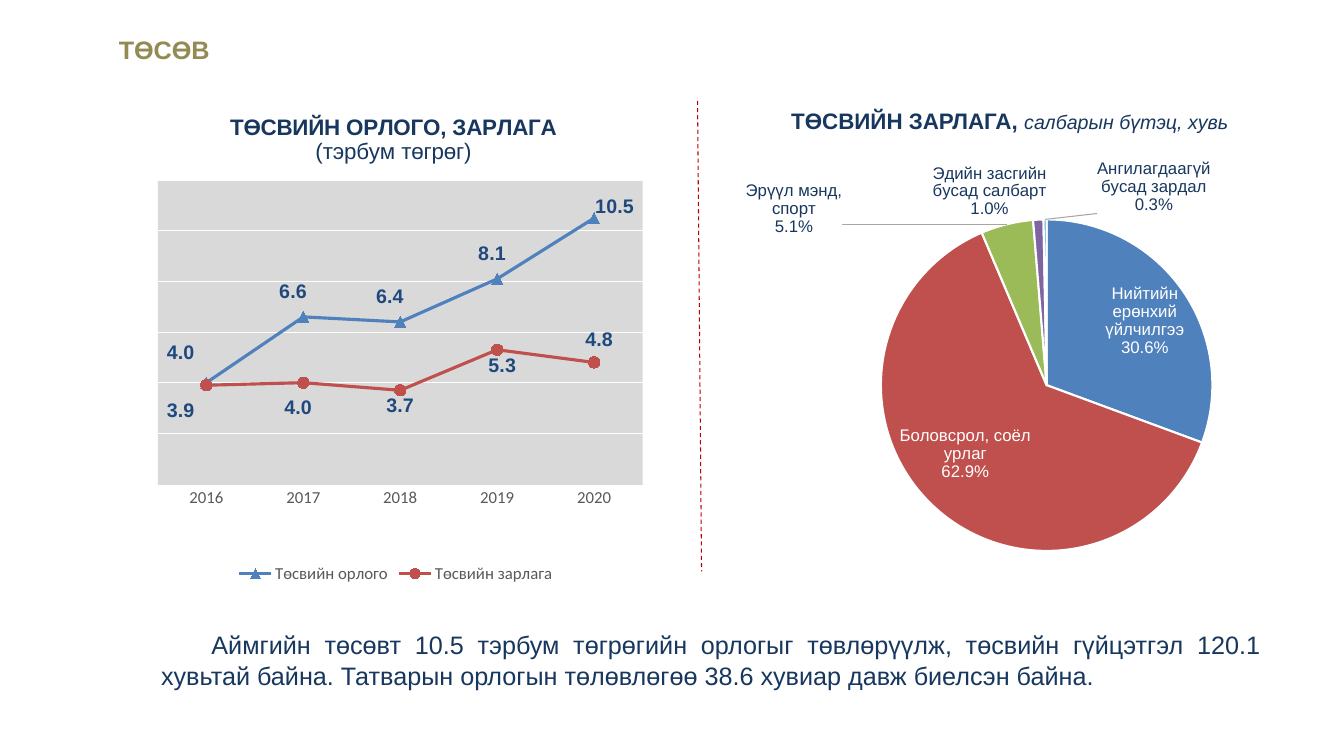
from dataclasses import dataclass
from lxml import etree
from pptx import Presentation
from pptx.chart.data import CategoryChartData
from pptx.dml.color import RGBColor
from pptx.enum.chart import (XL_CHART_TYPE, XL_LABEL_POSITION, XL_LEGEND_POSITION,
                             XL_MARKER_STYLE, XL_TICK_MARK)
from pptx.enum.dml import MSO_LINE
from pptx.enum.shapes import MSO_CONNECTOR
from pptx.enum.text import MSO_ANCHOR, PP_ALIGN
from pptx.oxml import parse_xml
from pptx.oxml.ns import qn
from pptx.util import Cm, Pt

LINE, PIE = XL_CHART_TYPE.LINE_MARKERS, XL_CHART_TYPE.PIE
ABOVE, BELOW = XL_LABEL_POSITION.ABOVE, XL_LABEL_POSITION.BELOW
CENTER, OUTSIDE = XL_LABEL_POSITION.CENTER, XL_LABEL_POSITION.OUTSIDE_END
TRIANGLE, CIRCLE = XL_MARKER_STYLE.TRIANGLE, XL_MARKER_STYLE.CIRCLE
NO_TICK, BOTTOM, DASH = XL_TICK_MARK.NONE, XL_LEGEND_POSITION.BOTTOM, MSO_LINE.DASH
LEFT, JUSTIFY = PP_ALIGN.LEFT, PP_ALIGN.JUSTIFY
TOP, STRAIGHT = MSO_ANCHOR.TOP, MSO_CONNECTOR.STRAIGHT
SPACES = ('xmlns:c="http://schemas.openxmlformats.org/drawingml/2006/chart" '
          'xmlns:a="http://schemas.openxmlformats.org/drawingml/2006/main" '
          'xmlns:c15="http://schemas.microsoft.com/office/drawing/2012/chart"')

@dataclass(frozen=True)
class Theme:
    font: str = "Arial"
    small: str = "Calibri"
    navy: str = "17375E"
    value: str = "1F497D"
    gold: str = "948A54"
    gray: str = "595959"
    lead: str = "A6A6A6"
    pale: str = "D9D9D9"
    white: str = "FFFFFF"
    rule: str = "C00000"
    slices: tuple = ("4F81BD", "C0504D", "9BBB59", "8064A2", "4BACC6")
    big: int = 18
    head: int = 16
    mid: int = 14
    note: int = 12

T = Theme()

def style(font, size, color, bold=False, italic=False, name=T.font):
    font.name, font.size, font.bold, font.italic = name, Pt(size), bold, italic
    font.color.rgb = RGBColor.from_string(color)

def paint(fill, color):
    fill.solid()
    fill.fore_color.rgb = RGBColor.from_string(color)

def stroke(line, color, width):
    line.color.rgb = RGBColor.from_string(color)
    line.width = Pt(width)

def add_run(para, text, *look):
    run = para.add_run()
    run.text = text
    style(run.font, *look)

def add_text(slide, box, runs):
    frame = slide.shapes.add_textbox(*map(Cm, box)).text_frame
    frame.word_wrap = True
    for run in runs:
        add_run(frame.paragraphs[0], *run)
    return frame.paragraphs[0]

def add_title(slide, text):
    title = slide.shapes.title
    title.left, title.top, title.width, title.height = map(Cm, (2.74, 0.74, 29.85, 1.02))
    paint(title.fill, T.white)
    title.text_frame.vertical_anchor = TOP
    para = title.text_frame.paragraphs[0]
    para.alignment = LEFT
    add_run(para, text, T.big, T.gold, True)

def add_rule(slide, *ends):
    rule = slide.shapes.add_connector(STRAIGHT, *map(Cm, ends))
    stroke(rule.line, T.rule, 0.75)
    rule.line.dash_style = DASH
    etree.SubElement(rule._element.spPr, qn("a:effectLst"))

def node(tag, body="", attrs=""):
    return parse_xml(f"<c:{tag} {SPACES} {attrs}>{body}</c:{tag}>")

def layout(modes="", **parts):
    body = "".join(f'<c:{tag} val="{num}"/>' for tag, num in parts.items())
    return node("layout", f"<c:manualLayout>{modes}{body}</c:manualLayout>")

def place(owner, index, frame):
    """Fix a chart part at edges measured from the chart's corner."""
    for old in owner.findall(qn("c:layout")):
        owner.remove(old)
    owner.insert(index, frame)

EDGE = '<c:xMode val="edge"/><c:yMode val="edge"/>'
INNER = '<c:layoutTarget val="inner"/>' + EDGE

def add_chart(slide, kind, box, cats, rows, plot):
    data = CategoryChartData(number_format="0.0")
    data.categories = cats
    for name, nums in rows:
        data.add_series(name, nums)
    chart = slide.shapes.add_chart(kind, *map(Cm, box), data).chart
    chart.font.name, chart.font.size = T.small, Pt(10)
    place(chart._chartSpace.chart.plotArea, 0, layout(INNER, **plot))
    return chart

def add_label(point, spot, shift, look):
    label = point.data_label
    style(label.font, *look)
    label.position = spot
    label._dLbl.insert(1, layout(x=shift[0], y=shift[1]))
    return label._dLbl

def add_trend(slide):
    rows = (("Төсвийн орлого", (4, 6.6, 6.4, 8.1, 10.5)),
            ("Төсвийн зарлага", (3.9, 4, 3.7, 5.3, 4.8)))
    chart = add_chart(slide, LINE, (3.53, 2.67, 12.9, 12.14),
                      ("2016", "2017", "2018", "2019", "2020"), rows,
                      dict(x=0.035, y=0.154, w=0.947, h=0.631))
    # Heading and legend
    title = chart.chart_title
    add_run(title.text_frame.paragraphs[0], "ТӨСВИЙН ОРЛОГО, ЗАРЛАГА", T.head, T.navy, True)
    add_run(title.text_frame.add_paragraph(), "(тэрбум төгрөг)", T.head, T.navy)
    title.include_in_layout = False
    place(title._element, 1, layout(EDGE, x=0.17, y=0.01))
    chart.has_legend = True
    chart.legend.position, chart.legend.include_in_layout = BOTTOM, False
    style(chart.legend.font, T.note, T.gray, name=T.small)
    # Axes and plot area
    years, scale = chart.category_axis, chart.value_axis
    years.major_tick_mark = NO_TICK
    style(years.tick_labels.font, T.note, T.gray, name=T.small)
    stroke(years.format.line, T.pale, 0.75)
    scale.minimum_scale, scale.maximum_scale, scale.major_unit = 0, 12, 2
    scale.visible = False
    stroke(scale.major_gridlines.format.line, T.white, 0.75)
    chart._chartSpace.chart.plotArea.append(node(
        "spPr", f'<a:solidFill><a:srgbClr val="{T.pale}"/></a:solidFill>'))
    # Series with their label offsets
    looks = ((TRIANGLE, ABOVE, ((-0.05, -0.02), (-0.02, -0.01), (-0.02, -0.01),
                                (-0.01, -0.01), (0.04, 0.02))),
             (CIRCLE, BELOW, ((-0.05, 0.01), (-0.01, 0.01), (0, -0.01),
                              (0.01, -0.01), (0.01, -0.09))))
    for row, color, (mark, spot, shifts) in zip(chart.plots[0].series, T.slices, looks):
        row.smooth = False
        stroke(row.format.line, color, 2.25)
        row.marker.style, row.marker.size = mark, 8
        paint(row.marker.format.fill, color)
        stroke(row.marker.format.line, color, 0.75)
        for num, shift in enumerate(shifts):
            add_label(row.points[num], spot, shift, (T.mid, T.value, True))
        # No leader lines
        group = row.data_labels._element
        for flag in group.findall(qn("c:showLeaderLines")):
            flag.set("val", "0")
        group.append(node("extLst", '<c:ext uri="{CE6537A1-D6FC-4f65-9D91-7224C49458BB}">'
                          '<c15:showLeaderLines val="0"/></c:ext>'))

def add_pie(slide):
    cats = ("Нийтийн ерөнхий үйлчилгээ", "Боловсрол, соёл урлаг", "Эрүүл мэнд, спорт",
            "Эдийн засгийн бусад салбарт", "Ангилагдаагүй бусад зардал")
    chart = add_chart(slide, PIE, (17.15, 3.78, 15.24, 10.67), cats,
                      (("Series 1", (30.6, 62.9, 5.1, 1, 0.3)),),
                      dict(x=0.331, y=0.164, w=0.549, h=0.783))
    chart.has_title = chart.has_legend = False
    chart.plots[0].vary_by_categories = True
    row = chart.plots[0].series[0]
    looks = ((CENTER, (0.05, -0.04), T.white), (CENTER, (-0.04, 0.02), T.white),
             (OUTSIDE, (-0.27, 0.04), T.navy), (OUTSIDE, (-0.08, 0.01), T.navy),
             (OUTSIDE, (0.18, 0), T.navy))
    for num, (spot, shift, color) in enumerate(looks):
        point = row.points[num]
        paint(point.format.fill, T.slices[num])
        stroke(point.format.line, T.white, 1.5)
        label = add_label(point, spot, shift, (T.note, color))
        label.insert(2, node("numFmt", attrs='formatCode="0.0&quot;%&quot;" sourceLinked="0"'))
        label.find(qn("c:showCatName")).set("val", "1")
        label.append(node("separator", "\n"))
        if num == 1:
            label.append(node("extLst", '<c:ext uri="{CE6537A1-D6FC-4f65-9D91-7224C49458BB}">'
                              '<c15:layout><c:manualLayout><c:w val="0.17"/><c:h val="0.14"/>'
                              '</c:manualLayout></c15:layout></c:ext>'))
    row.data_labels._element.append(node(
        "leaderLines", f'<c:spPr><a:ln w="9525"><a:solidFill><a:srgbClr val="{T.lead}"/>'
        '</a:solidFill></a:ln></c:spPr>'))

def main():
    prs = Presentation()
    prs.slide_width, prs.slide_height = Cm(33.87), Cm(19.05)
    slide = prs.slides.add_slide(prs.slide_layouts[5])
    add_title(slide, "ТӨСӨВ")
    # Income and spending by year, then spending by sector
    add_trend(slide)
    add_rule(slide, 17.58, 2.54, 17.68, 14.4)
    add_text(slide, (19.69, 2.57, 11.86, 0.94),
             (("ТӨСВИЙН ЗАРЛАГА, ", T.head, T.navy, True),
              ("салбарын бүтэц, хувь", T.mid, T.navy, False, True)))
    add_pie(slide)
    # Summary
    para = add_text(slide, (3.81, 15.74, 28.22, 1.8), ((
        "Аймгийн төсөвт 10.5 тэрбум төгрөгийн орлогыг төвлөрүүлж, төсвийн гүйцэтгэл 120.1 "
        "хувьтай байна. Татварын орлогын төлөвлөгөө 38.6 хувиар давж биелсэн байна.",
        T.big, T.navy),))
    para.alignment = JUSTIFY
    para._p.get_or_add_pPr().set("indent", str(Cm(1.27)))
    prs.save("out.pptx")

if __name__ == "__main__":
    main()
